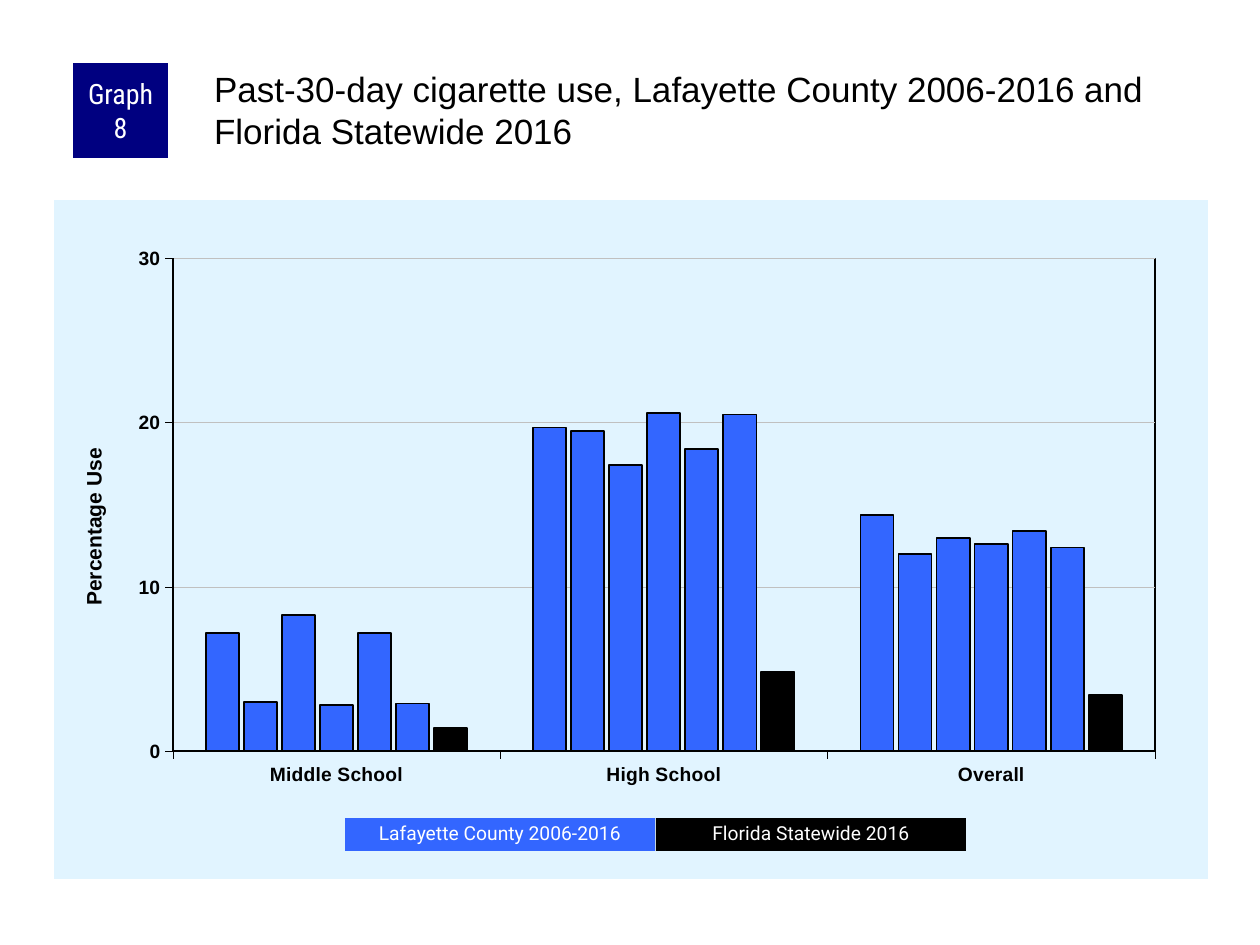
from dataclasses import dataclass

from lxml.etree import _Element as Element
from pptx import Presentation
from pptx.chart.axis import CategoryAxis, ValueAxis
from pptx.chart.chart import Chart
from pptx.chart.data import CategoryChartData
from pptx.dml.color import RGBColor
from pptx.enum.chart import XL_CHART_TYPE as ChartType, XL_TICK_MARK as TickMark
from pptx.enum.shapes import MSO_SHAPE as ShapeType
from pptx.enum.text import MSO_ANCHOR as Anchor, PP_ALIGN as Align
from pptx.oxml import parse_xml
from pptx.oxml.ns import nsdecls, qn
from pptx.slide import Slide
from pptx.text.text import Font, TextFrame
from pptx.util import Emu, Pt

EMU_PER_PX = 914400 / 126
BLACK, WHITE, NAVY, BLUE = "000000", "FFFFFF", "000080", "3366FF"
PALE_BLUE, GRAY = "E1F4FF", "C0C0C0"
CATEGORIES = ("Middle School", "High School", "Overall")
COUNTY_VALUES = (
    (7.2, 19.7, 14.4),
    (3, 19.5, 12),
    (8.3, 17.4, 13),
    (2.8, 20.6, 12.6),
    (7.2, 18.4, 13.4),
    (2.9, 20.5, 12.4),
)
STATE_VALUES = (1.4, 4.8, 3.4)


@dataclass(frozen=True)
class Box:
    """A place on the slide in px."""

    left: int
    top: int
    width: int
    height: int

    def emu(self) -> tuple[Emu, ...]:
        """Return the four lengths in EMU."""
        return tuple(px(n) for n in (self.left, self.top, self.width, self.height))


@dataclass(frozen=True)
class Label:
    """A filled rectangle with centred white text."""

    text: str
    box: Box
    fill: str
    font: str
    size: int
    spacing: float
    margins: tuple[int, int]


LABELS = (
    Label("Graph 8", Box(73, 63, 95, 95), NAVY, "Roboto Condensed", 16, 1.0, (6, 0)),
    Label("Lafayette County 2006-2016", Box(345, 818, 310, 33), BLUE, "Roboto", 11, 0.9, (13, 6)),
    Label("Florida Statewide 2016", Box(656, 818, 310, 33), BLACK, "Roboto", 11, 0.9, (13, 6)),
)


def px(length: int) -> Emu:
    """Turn px into EMU."""
    return Emu(round(length * EMU_PER_PX))


def color(value: str) -> RGBColor:
    """Turn a hex string into a colour."""
    return RGBColor.from_string(value)


def style_font(font: Font, name: str, size: int, fill: str, bold: bool = False) -> None:
    """Set the look of a font."""
    font.name, font.size, font.bold = name, Pt(size), bold
    font.color.rgb = color(fill)


def set_margins(frame: TextFrame, left: int, top: int, right: int, bottom: int) -> None:
    """Set text insets in px."""
    frame.margin_left, frame.margin_top = px(left), px(top)
    frame.margin_right, frame.margin_bottom = px(right), px(bottom)


def add_title(slide: Slide) -> None:
    """Place and fill the title placeholder."""
    title = slide.shapes.title
    title.left, title.top, title.width, title.height = Box(210, 63, 998, 105).emu()
    frame = title.text_frame
    frame.word_wrap, frame.vertical_anchor = True, Anchor.TOP
    set_margins(frame, 4, 4, 0, 0)
    paragraph = frame.paragraphs[0]
    paragraph.alignment = Align.LEFT
    paragraph.line_spacing = 1.0
    run = paragraph.add_run()
    run.text = "Past-30-day cigarette use, Lafayette County 2006-2016 and Florida Statewide 2016"
    style_font(run.font, "Arial", 20, BLACK)


def add_label(slide: Slide, label: Label) -> None:
    """Draw one label."""
    shape = slide.shapes.add_shape(ShapeType.RECTANGLE, *label.box.emu())
    shape.shadow.inherit = False
    shape.fill.solid()
    shape.fill.fore_color.rgb = color(label.fill)
    shape.line.fill.background()
    frame = shape.text_frame
    frame.word_wrap, frame.vertical_anchor = True, Anchor.MIDDLE
    set_margins(frame, *label.margins, *label.margins)
    paragraph = frame.paragraphs[0]
    paragraph.alignment, paragraph.line_spacing = Align.CENTER, label.spacing
    run = paragraph.add_run()
    run.text = label.text
    style_font(run.font, label.font, label.size, WHITE)


def set_layout(parent: Element, index: int, target: str, **fractions: float) -> None:
    """Give a chart part a manual layout."""
    for layout in parent.findall(qn("c:layout")):
        parent.remove(layout)
    modes = "".join(f'<c:{axis}Mode val="edge"/>' for axis in "xy")
    values = "".join(f'<c:{key} val="{value}"/>' for key, value in fractions.items())
    parent.insert(index, parse_xml(
        f'<c:layout {nsdecls("c")}><c:manualLayout>{target}{modes}{values}'
        "</c:manualLayout></c:layout>"
    ))


def area_format(content: str) -> Element:
    """Build the format of a chart area."""
    return parse_xml(f'<c:spPr {nsdecls("c", "a")}>{content}</c:spPr>')


def style_axis(axis: CategoryAxis | ValueAxis) -> None:
    """Set what both axes share."""
    axis.major_tick_mark, axis.minor_tick_mark = TickMark.OUTSIDE, TickMark.NONE
    axis.format.line.color.rgb = color(BLACK)
    axis.format.line.width = Pt(0.25)
    style_font(axis.tick_labels.font, "Arial", 11, BLACK, True)


def style_value_axis(axis: ValueAxis) -> None:
    """Set scale, gridlines and title of the value axis."""
    axis.minimum_scale, axis.maximum_scale, axis.major_unit = 0, 30, 10
    axis.has_major_gridlines = True
    axis.major_gridlines.format.line.color.rgb = color(GRAY)
    axis.major_gridlines.format.line.width = Pt(0.25)
    axis.has_title = True
    run = axis.axis_title.text_frame.paragraphs[0].add_run()
    run.text = "Percentage Use"
    style_font(run.font, "Arial", 12, BLACK, True)
    set_layout(axis.axis_title.element, 1, "", x=0.02, y=0.36)


def style_areas(chart: Chart) -> None:
    """Fill the chart area and frame the plot area."""
    chart_node = chart.element.find(qn("c:chart"))
    chart_node.addnext(area_format(
        f'<a:solidFill><a:srgbClr val="{PALE_BLUE}"/></a:solidFill><a:ln><a:noFill/></a:ln>'
    ))
    plot_area = chart_node.find(qn("c:plotArea"))
    target = '<c:layoutTarget val="inner"/>'
    set_layout(plot_area, 0, target, x=0.103, y=0.086, w=0.851, h=0.726)
    plot_area.append(area_format(
        '<a:noFill/><a:ln w="12700"><a:solidFill>'
        f'<a:srgbClr val="{BLACK}"/></a:solidFill></a:ln>'
    ))


def add_usage_chart(slide: Slide) -> None:
    """Draw the column chart."""
    data = CategoryChartData()
    data.categories = CATEGORIES
    for number, values in enumerate((*COUNTY_VALUES, STATE_VALUES), 1):
        data.add_series(f"Series {number}", values)
    box = Box(54, 200, 1154, 679)
    chart = slide.shapes.add_chart(ChartType.COLUMN_CLUSTERED, *box.emu(), data).chart
    chart.has_legend = chart.has_title = False
    style_font(chart.font, "Arial", 8, BLACK)
    plot = chart.plots[0]
    plot.gap_width, plot.overlap, plot.vary_by_categories = 200, -15, False
    for index, series in enumerate(plot.series):
        series.invert_if_negative = False
        series.format.fill.solid()
        fill = BLUE if index < len(COUNTY_VALUES) else BLACK
        series.format.fill.fore_color.rgb = color(fill)
        series.format.line.color.rgb = color(BLACK)
        series.format.line.width = Pt(1)
    style_axis(chart.category_axis)
    style_axis(chart.value_axis)
    style_value_axis(chart.value_axis)
    style_areas(chart)


def main() -> None:
    """Build and save the slide."""
    presentation = Presentation()
    presentation.slide_width, presentation.slide_height = px(1260), px(945)
    slide = presentation.slides.add_slide(presentation.slide_layouts[5])
    add_usage_chart(slide)
    add_title(slide)
    for label in LABELS:
        add_label(slide, label)
    presentation.save("out.pptx")


if __name__ == "__main__":
    main()
